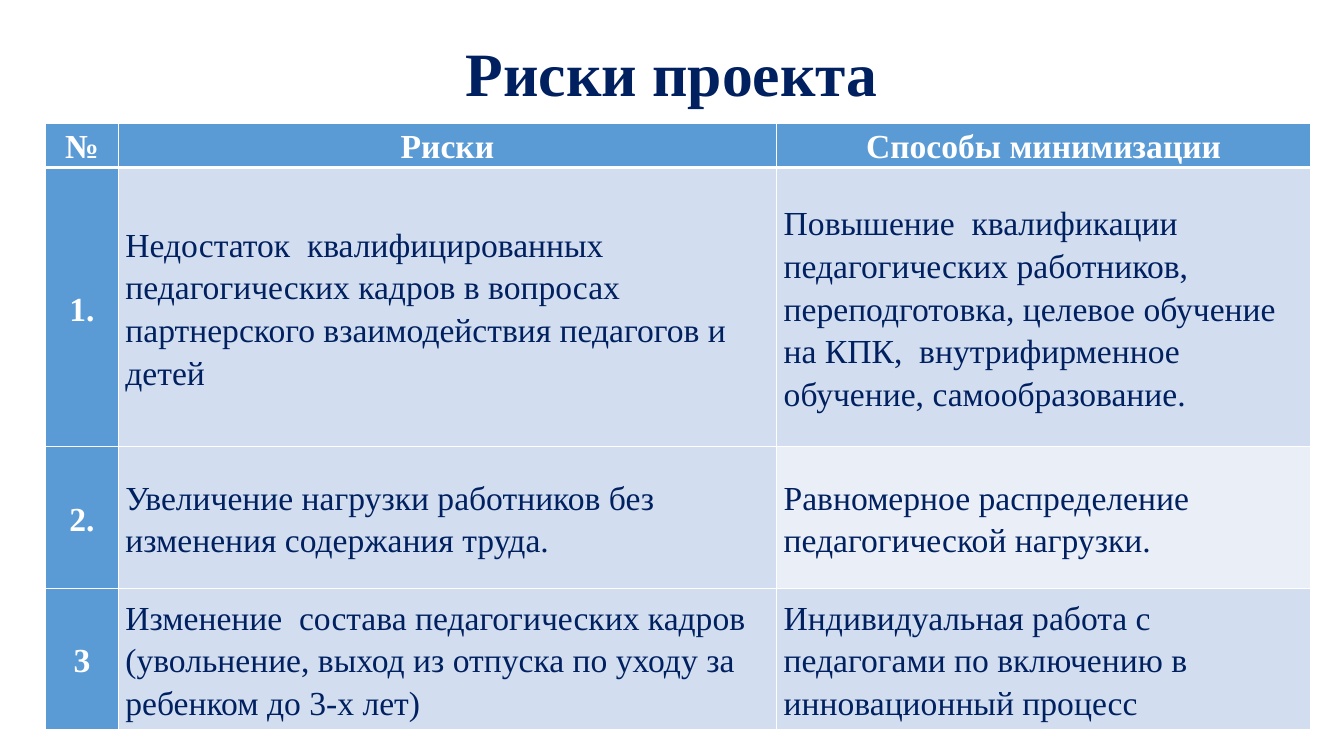
from lxml import etree
from pptx import Presentation
from pptx.dml.color import RGBColor
from pptx.enum.text import MSO_ANCHOR, PP_ALIGN
from pptx.oxml.ns import qn
from pptx.util import Cm, Pt

CENTER, LEFT = PP_ALIGN.CENTER, PP_ALIGN.LEFT
TOP, MIDDLE = MSO_ANCHOR.TOP, MSO_ANCHOR.MIDDLE
TITLE_ONLY = 5
FONT = "Times New Roman"
NAVY, WHITE, BLUE = "002060", "FFFFFF", "5B9BD5"
BAND, PALE = "D2DEEF", "EAEFF7"

COL_WIDTHS = (1.83, 16.59, 13.46)
ROW_HEIGHTS = (1.12, 7.04, 3.56, 3.56)
RISKS = (
    ("№", "Риски", "Способы минимизации"),
    ("1.",
     "Недостаток  квалифицированных педагогических кадров в вопросах "
     "партнерского взаимодействия педагогов и детей",
     "Повышение  квалификации педагогических работников, переподготовка, "
     "целевое обучение  на КПК,  внутрифирменное обучение, самообразование."),
    ("2.",
     "Увеличение нагрузки работников без изменения содержания труда.",
     "Равномерное распределение педагогической нагрузки."),
    ("3",
     "Изменение  состава педагогических кадров (увольнение, выход из отпуска "
     "по уходу за ребенком до 3-х лет)",
     "Индивидуальная работа с педагогами по включению в инновационный процесс"),
)


def rgb(value):
    return RGBColor.from_string(value)


def add_run(p, text, size, color, bold):
    r = p.add_run()
    r.text = text
    r.font.name = FONT
    r.font.size = Pt(size)
    r.font.bold = bold
    r.font.color.rgb = rgb(color)


def set_borders(cell, bottom):
    """Draw white cell borders; bottom is the lower line's width in points."""
    tcPr = cell._tc.get_or_add_tcPr()
    sides = (("a:lnL", 1), ("a:lnR", 1), ("a:lnT", 1), ("a:lnB", bottom))
    for i, (tag, width) in enumerate(sides):
        ln = etree.Element(qn(tag), w=str(Pt(width)))
        fill = etree.SubElement(ln, qn("a:solidFill"))
        etree.SubElement(fill, qn("a:srgbClr"), val=WHITE)
        tcPr.insert(i, ln)  # borders come before the fill


def place_title(s, left, top, width, height):
    sp = s.shapes.title
    sp.left, sp.top, sp.width, sp.height = Cm(left), Cm(top), Cm(width), Cm(height)
    tf = sp.text_frame
    tf.word_wrap = True
    tf.vertical_anchor = MIDDLE
    p = tf.paragraphs[0]
    p.alignment = CENTER
    p.line_spacing = 0.9
    p.font.size = Pt(44)
    add_run(p, "Риски проекта", 44, NAVY, True)
    p.add_line_break()


def format_cell(cell, text, row, col):
    header = row == 0
    accent = header or col == 0
    cell.margin_left = cell.margin_right = Cm(0.18)
    cell.margin_top = cell.margin_bottom = 0
    cell.vertical_anchor = TOP if header else MIDDLE

    # Accent header and number column, banded remainder
    if accent:
        color = BLUE
    else:
        color = PALE if (row, col) == (2, 2) else BAND
    cell.fill.solid()
    cell.fill.fore_color.rgb = rgb(color)
    set_borders(cell, 3 if header else 1)

    p = cell.text_frame.paragraphs[0]
    p.alignment = CENTER if accent else LEFT
    p.line_spacing = 1.15
    add_run(p, text, 24, WHITE if accent else NAVY, accent)


def place_risk_table(s, left, top):
    table = s.shapes.add_table(
        len(RISKS), len(COL_WIDTHS), Cm(left), Cm(top),
        Cm(sum(COL_WIDTHS)), Cm(sum(ROW_HEIGHTS))).table
    for column, width in zip(table.columns, COL_WIDTHS):
        column.width = Cm(width)
    for row, height in zip(table.rows, ROW_HEIGHTS):
        row.height = Cm(height)
    for i, texts in enumerate(RISKS):
        for j, text in enumerate(texts):
            format_cell(table.cell(i, j), text, i, j)


def main():
    prs = Presentation()
    prs.slide_width, prs.slide_height = Cm(33.87), Cm(19.05)
    s = prs.slides.add_slide(prs.slide_layouts[TITLE_ONLY])
    s.background.fill.solid()
    s.background.fill.fore_color.rgb = rgb(WHITE)
    # Title, then the table of risks below it
    place_title(s, 2.33, 1.01, 29.21, 3.68)
    place_risk_table(s, 1.15, 3.1)
    prs.save("out.pptx")


if __name__ == "__main__":
    main()
